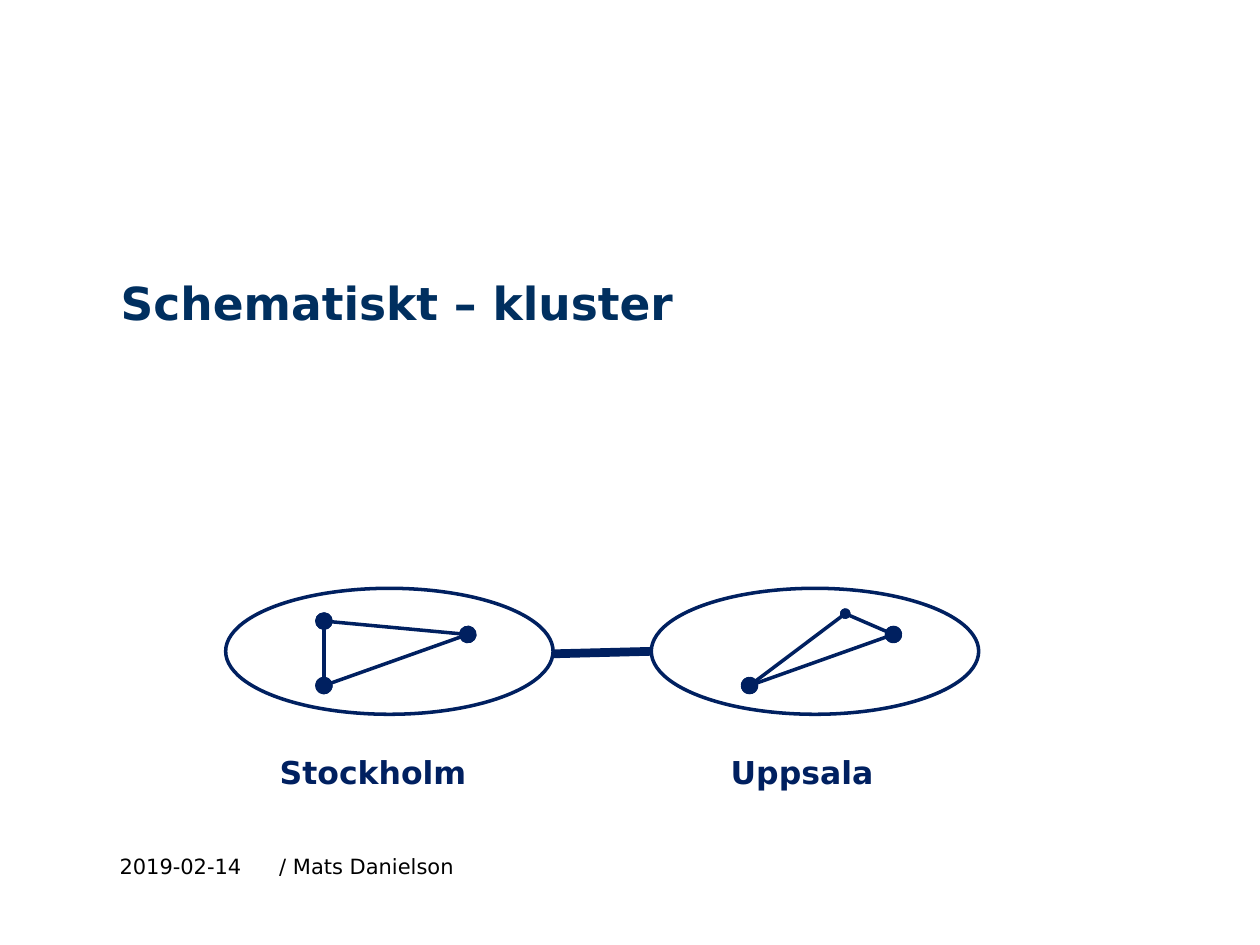
from pptx import Presentation
from pptx.dml.color import RGBColor
from pptx.enum.shapes import MSO_CONNECTOR, MSO_SHAPE
from pptx.enum.text import MSO_ANCHOR, MSO_AUTO_SIZE, PP_ALIGN
from pptx.oxml.ns import qn
from pptx.util import Cm, Pt
from lxml import etree

OVAL = MSO_SHAPE.OVAL
LINE = MSO_CONNECTOR.STRAIGHT
TOP = MSO_ANCHOR.TOP
LEFT = PP_ALIGN.LEFT
NONE = MSO_AUTO_SIZE.NONE
GROW = MSO_AUTO_SIZE.SHAPE_TO_FIT_TEXT
FONT = "DejaVu Sans"
NAVY = "002060"

# Ring size and the two nodes that both clusters share, in cm
WIDE, HIGH = 6.6, 2.54
LOW, EAST = (1.98, 1.96, "lg"), (4.88, 0.93, "lg")


def paint(part, color):
    part.rgb = RGBColor.from_string(color)


def write(frame, text, size, color, bold=False):
    frame.vertical_anchor = TOP
    para = frame.paragraphs[0]
    para.alignment = LEFT
    run = para.add_run()
    run.text = text
    run.font.name = FONT
    run.font.size = Pt(size)
    run.font.bold = bold
    paint(run.font.color, color)
    return para


def add_text(slide, box, text, size, color, bold=False, wrap=True):
    frame = slide.shapes.add_textbox(*map(Cm, box)).text_frame
    frame.word_wrap = wrap
    frame.auto_size = NONE if wrap else GROW
    write(frame, text, size, color, bold)


def add_line(slide, start, end, width, dots=()):
    line = slide.shapes.add_connector(LINE, *map(Cm, (*start, *end)))
    line.line.width = Pt(width)
    line.line.fill.solid()
    paint(line.line.fill.fore_color, NAVY)
    # Dots at the head and tail
    ln = line.line._get_or_add_ln()
    for tag, size in zip(("a:headEnd", "a:tailEnd"), dots):
        etree.SubElement(ln, qn(tag), type="oval", w=size, len=size)
    etree.SubElement(line._element.spPr, qn("a:effectLst"))


def add_title(slide, box, text):
    title = slide.shapes.title
    title.left, title.top, title.width, title.height = map(Cm, box)
    title.text_frame.auto_size = NONE
    para = write(title.text_frame, text, 26, "002F5F", True)
    para.line_spacing = Pt(32)


def add_cluster(slide, left, top, nodes, name, indent, width):
    # Ring
    ring = slide.shapes.add_shape(OVAL, *map(Cm, (left, top, WIDE, HIGH)))
    ring.shadow.inherit = False
    ring.fill.background()
    ring.line.width = Pt(2)
    paint(ring.line.color, NAVY)
    # Links from each node to the next
    for (x, y, head), (u, v, tail) in zip(nodes, nodes[1:] + nodes[:1]):
        add_line(slide, (left + x, top + y), (left + u, top + v), 2,
                 (head, tail))
    # Name below
    box = (left + indent, top + 3.2, width, 1.02)
    add_text(slide, box, name, 18, NAVY, True, wrap=False)


def add_footer(slide, left, top):
    add_text(slide, (left, top, 3.12, 0.79), "2019-02-14", 12, "000000")
    add_text(slide, (left + 3.22, top, 12.47, 1.45), "/ Mats Danielson",
             12, "000000")


def main():
    deck = Presentation()
    deck.slide_width, deck.slide_height = Cm(25.4), Cm(19.05)
    slide = deck.slides.add_slide(deck.slide_layouts[5])

    add_title(slide, (2.18, 5.38, 19.02, 2.21), "Schematiskt – kluster")
    add_footer(slide, 2.16, 17.09)

    # Two clusters and the trunk between them
    west, east, top = 4.55, 13.13, 11.86
    add_cluster(slide, west, top, [EAST, LOW, (1.98, 0.66, "lg")],
                "Stockholm", 0.84, 4.32)
    add_cluster(slide, east, top, [EAST, LOW, (3.91, 0.51, "med")],
                "Uppsala", 1.35, 3.38)
    mid = top + HIGH / 2
    add_line(slide, (east, mid), (west + WIDE, mid + 0.05), 5)

    deck.save("out.pptx")


if __name__ == "__main__":
    main()
